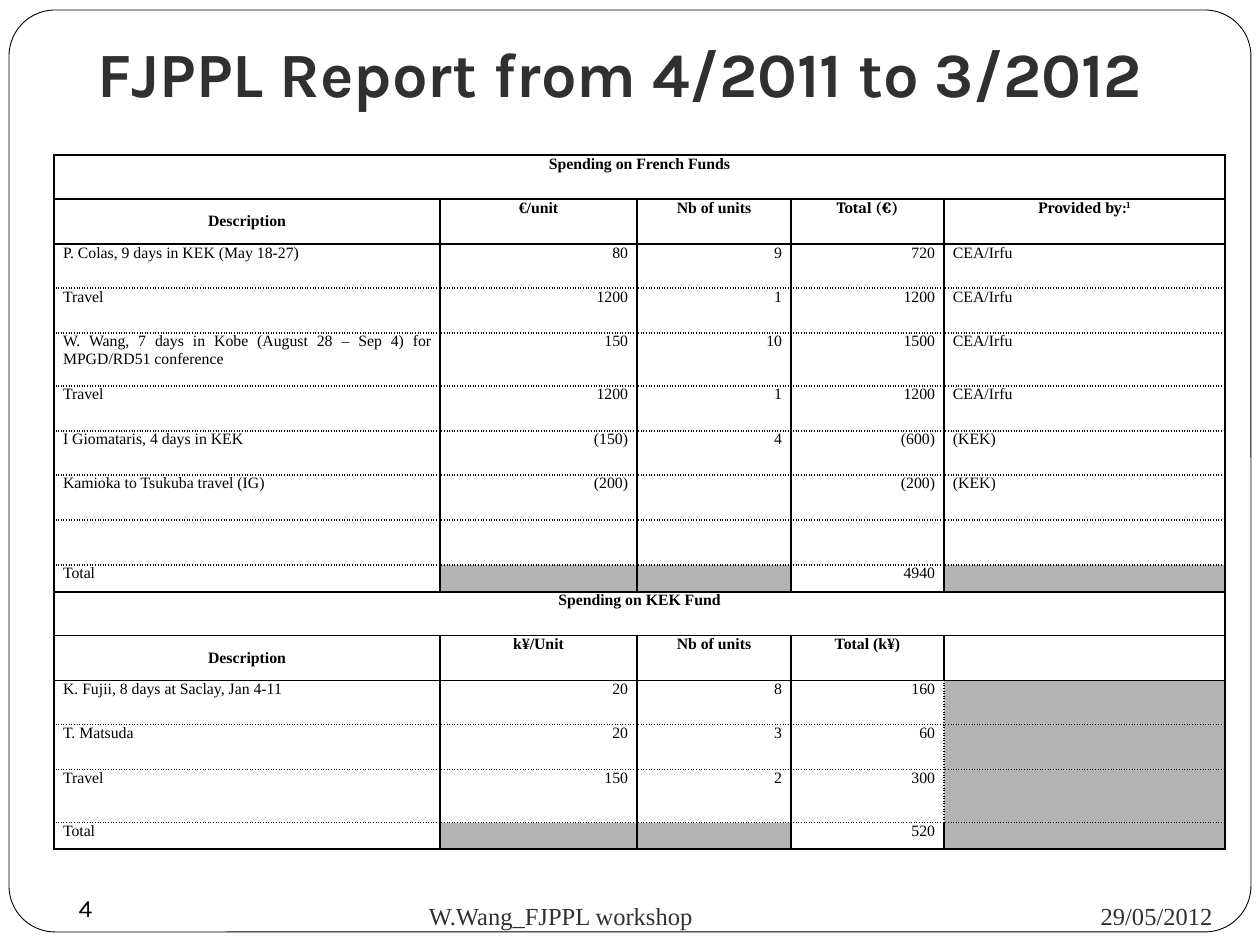
from lxml import etree
from pptx import Presentation
from pptx.dml.color import RGBColor
from pptx.enum.shapes import MSO_SHAPE
from pptx.enum.text import MSO_ANCHOR, MSO_AUTO_SIZE, PP_ALIGN
from pptx.oxml.ns import qn
from pptx.util import Emu, Pt

ROUNDED, ELLIPSE = MSO_SHAPE.ROUNDED_RECTANGLE, MSO_SHAPE.OVAL
TOP, MIDDLE, BOTTOM = MSO_ANCHOR.TOP, MSO_ANCHOR.MIDDLE, MSO_ANCHOR.BOTTOM
LEFT, CENTER, RIGHT = PP_ALIGN.LEFT, PP_ALIGN.CENTER, PP_ALIGN.RIGHT
JUSTIFY = PP_ALIGN.JUSTIFY
NO_FIT = MSO_AUTO_SIZE.NONE
TITLE_ONLY = 5
PX_PER_INCH = 126

COLORS = {"paper": "FFFFFF", "ink": "000000", "soft": "303030", "blocked": "B3B3B3"}
SERIF, SANS, SYMBOLS = "Times New Roman", "Karla", "Cambria"

COLUMN_WIDTHS = [386, 197, 154, 153, 281]
ITEM_ALIGNS = [JUSTIFY, RIGHT, RIGHT, RIGHT, JUSTIFY]

# Each row: kind, height in px, cell texts; None marks a blocked cell.
ROWS = [
    ("banner", 44, ["Spending on French Funds", "", "", "", ""]),
    ("header", 45, ["Description", "€/unit", "Nb of units", "Total (€)", "Provided by:"]),
    ("item", 44, ["P. Colas, 9 days in KEK (May 18-27)", "80", "9", "720", "CEA/Irfu"]),
    ("item", 45, ["Travel", "1200", "1", "1200", "CEA/Irfu"]),
    ("item", 53, ["W. Wang, 7 days in Kobe (August 28 – Sep 4) for MPGD/RD51 conference",
                  "150", "10", "1500", "CEA/Irfu"]),
    ("item", 45, ["Travel", "1200", "1", "1200", "CEA/Irfu"]),
    ("item", 44, ["I Giomataris, 4 days in KEK", "(150)", "4", "(600)", "(KEK)"]),
    ("item", 45, ["Kamioka to Tsukuba travel (IG)", "(200)", "", "(200)", "(KEK)"]),
    ("item", 45, ["", "", "", "", ""]),
    ("total", 27, ["Total", None, None, "4940", None]),
    ("banner", 44, ["Spending on KEK Fund", "", "", "", ""]),
    ("header", 45, ["Description", "k¥/Unit", "Nb of units", "Total (k¥)", ""]),
    ("item", 44, ["K. Fujii, 8 days at Saclay, Jan 4-11", "20", "8", "160", None]),
    ("item", 45, ["T. Matsuda", "20", "3", "60", None]),
    ("item", 53, ["Travel", "150", "2", "300", None]),
    ("total", 26, ["Total", None, None, "520", None]),
]

# Border styles: width in points, dash.
THICK, THIN, DOTTED = (1.5, "solid"), (1, "solid"), (1, "sysDot")
BOTTOM_BORDERS = {"banner": THIN, "header": THIN, "item": DOTTED, "total": THICK}


def px(length):
    return Emu(round(length * 914400 / PX_PER_INCH))


def rgb(name):
    return RGBColor.from_string(COLORS[name])


class Slide:
    def __init__(self, deck):
        self.page = deck.slides.add_slide(deck.slide_layouts[TITLE_ONLY])
        self.shapes = self.page.shapes

    def style(self, para, size, font=SERIF, color="ink", bold=False, align=LEFT):
        para.alignment = align
        for span in para.runs:
            span.font.size, span.font.name, span.font.bold = Pt(size), font, bold
            span.font.color.rgb = rgb(color)

    def title(self, text, area):
        title = self.shapes.title
        title.left, title.top, title.width, title.height = map(px, area)
        frame = title.text_frame
        frame.text = text
        frame.word_wrap, frame.auto_size, frame.vertical_anchor = True, NO_FIT, BOTTOM
        frame.margin_left = frame.margin_right = 0  # keeps the title on one line
        frame.margin_top, frame.margin_bottom = px(6), px(13)
        self.style(frame.paragraphs[0], 36, SANS, "soft", True, CENTER)
        self.shapes.element.append(title.element)  # in front of the frame

    def shape(self, kind, area):
        shape = self.shapes.add_shape(kind, *map(px, area))
        shape.shadow.inherit = False
        shape.fill.solid()
        shape.fill.fore_color.rgb = rgb("paper")
        shape.line.fill.background()
        return shape

    def frame(self, area):
        frame = self.shape(ROUNDED, area)
        frame.adjustments[0] = 0.05
        frame.line.color.rgb = rgb("ink")
        frame.line.width = Pt(0.5)

    def page_number(self, text, area):
        frame = self.shape(ELLIPSE, area).text_frame
        frame.text = text
        frame.word_wrap, frame.vertical_anchor = False, MIDDLE
        frame.margin_left = frame.margin_right = 0
        frame.margin_top = frame.margin_bottom = 0
        self.style(frame.paragraphs[0], 14, SANS, align=CENTER)

    def footer(self, text, area):
        frame = self.shapes.add_textbox(*map(px, area)).text_frame
        frame.text = text
        frame.word_wrap, frame.vertical_anchor = True, MIDDLE
        self.style(frame.paragraphs[0], 14, color="soft", align=RIGHT)

    def borders(self, cell, **sides):
        properties = cell._tc.get_or_add_tcPr()
        for side in "LRTB":
            width, dash = sides[side]
            line = etree.SubElement(properties, qn(f"a:ln{side}"), w=str(Pt(width)))
            fill = etree.SubElement(line, qn("a:solidFill"))
            etree.SubElement(fill, qn("a:srgbClr"), val=COLORS["ink"])
            etree.SubElement(line, qn("a:prstDash"), val=dash)

    def cell_text(self, cell, text, kind, column):
        cell.text = text
        cell.margin_left = cell.margin_right = px(9)
        cell.margin_top = cell.margin_bottom = 0
        heading = kind in ("banner", "header")
        cell.vertical_anchor = MIDDLE if kind == "header" and column == 0 else TOP
        para = cell.text_frame.paragraphs[0]
        if text == "Provided by:":
            footnote = para.add_run()
            footnote.text = "1"
            footnote._r.get_or_add_rPr().set("baseline", "30000")
        font = SYMBOLS if text in ("Total (€)", "Provided by:") else SERIF
        self.style(para, 9, font, bold=heading,
                   align=CENTER if heading else ITEM_ALIGNS[column])
        if not text:  # keeps empty cells from growing the row
            etree.SubElement(para._p, qn("a:endParaRPr"), sz="900")

    def spending_table(self, left, top):
        heights = [height for _, height, _ in ROWS]
        area = (left, top, sum(COLUMN_WIDTHS), sum(heights))
        table = self.shapes.add_table(
            len(ROWS), len(COLUMN_WIDTHS), *map(px, area)).table
        table.first_row = table.horz_banding = False
        for column, width in zip(table.columns, COLUMN_WIDTHS):
            column.width = px(width)
        last = len(COLUMN_WIDTHS) - 1
        above = THICK
        for index, (kind, height, texts) in enumerate(ROWS):
            table.rows[index].height = px(height)
            below = BOTTOM_BORDERS[kind]
            # Dotted divider beside the blocked cells of an item row
            divider = DOTTED if kind == "item" and texts[last] is None else THIN
            for column, text in enumerate(texts):
                cell = table.cell(index, column)
                self.cell_text(cell, text or "", kind, column)
                if kind != "banner" or column == 0:
                    at_right = column == last or kind == "banner"
                    self.borders(
                        cell, T=above, B=below,
                        L=THICK if column == 0 else divider if column == last else THIN,
                        R=THICK if at_right else divider if column == last - 1 else THIN)
                if text is None:
                    cell.fill.solid()
                    cell.fill.fore_color.rgb = rgb("blocked")
                else:
                    cell.fill.background()
            if kind == "banner":
                table.cell(index, 0).merge(table.cell(index, last))
            above = below


def main():
    deck = Presentation()
    deck.slide_width, deck.slide_height = px(1260), px(945)
    slide = Slide(deck)
    slide.frame((9, 10, 1242, 922))
    slide.footer("29/05/2012", (884, 883, 341, 65))
    slide.footer("W.Wang_FJPPL workshop", (160, 884, 545, 63))
    slide.page_number("4", (54, 886, 63, 43))
    slide.spending_table(54, 155)
    slide.title("FJPPL Report from 4/2011 to 3/2012", (84, 16, 1072, 107))
    deck.save("out.pptx")


if __name__ == "__main__":
    main()
